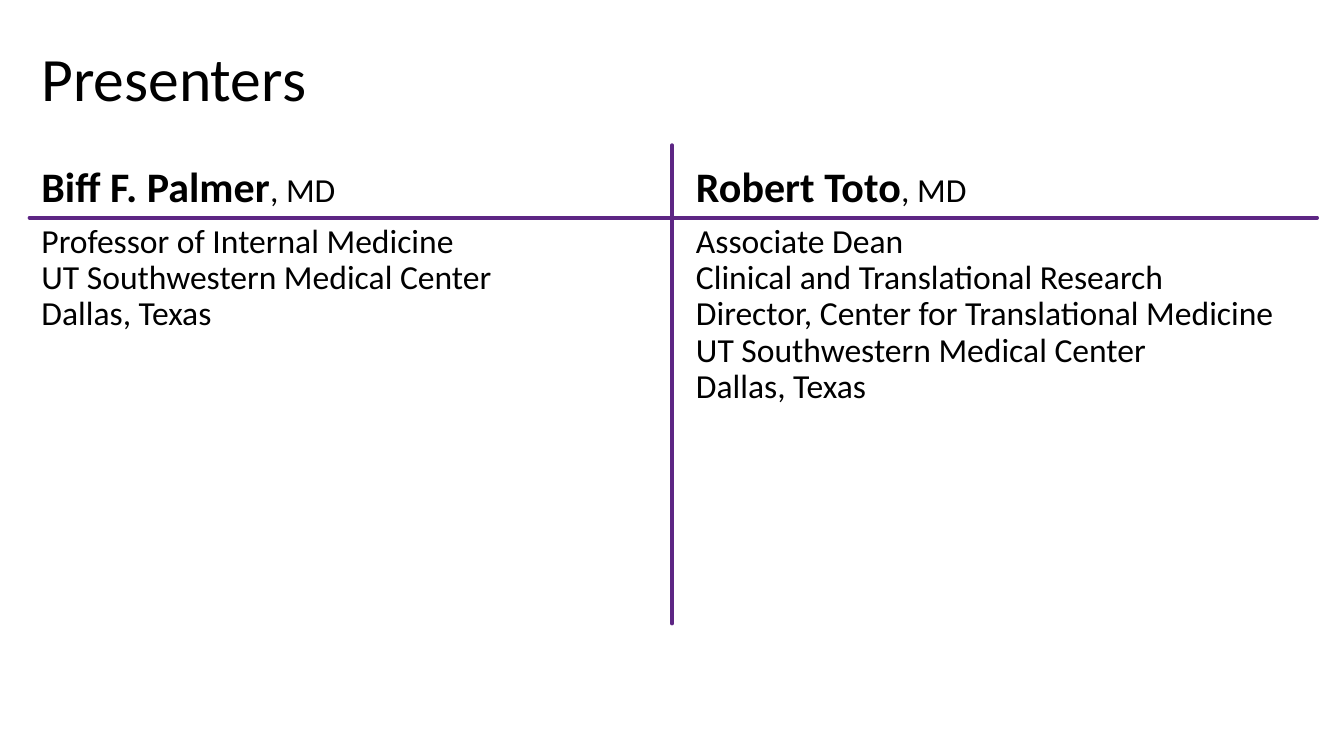
from pptx import Presentation
from pptx.dml.color import RGBColor
from pptx.enum.shapes import MSO_CONNECTOR as CONNECTOR
from pptx.enum.text import MSO_ANCHOR as ANCHOR
from pptx.oxml.ns import qn
from pptx.util import Inches, Pt

COLORS = {"text": "000000", "rule": "5D2684"}
FONT = "Calibri"

# Grid, in inches, on a 16:9 slide
WIDTH = 10
HEIGHT = WIDTH * 9 / 16
MARGIN, GUTTER = 0.21, 0.16
COL_W = (WIDTH - 2 * MARGIN - GUTTER) / 2
TITLE_TOP, TITLE_H = 0.14, 0.94
NAME_TOP, NAME_H, DETAILS_H = 1.1, 0.52, 3.02
RULE_Y = NAME_TOP + NAME_H
BOTTOM = RULE_Y + DETAILS_H

# Name, degree, paragraphs of details (\v is a line break)
PRESENTERS = [
    ("Biff F. Palmer", ", MD",
     ["Professor of Internal Medicine",
      "UT Southwestern Medical Center",
      "Dallas, Texas"]),
    ("Robert Toto", ", MD",
     ["Associate Dean\vClinical and Translational Research\v"
      "Director, Center for Translational Medicine",
      "UT Southwestern Medical Center",
      "Dallas, Texas"]),
]


def format_run(r, size, bold=False):
    r.font.name, r.font.size, r.font.bold = FONT, Pt(size), bold
    r.font.color.rgb = RGBColor.from_string(COLORS["text"])


def add_text(s, box, text, size, anchor=ANCHOR.TOP):
    tf = s.shapes.add_textbox(*map(Inches, box)).text_frame
    tf.word_wrap = True
    tf.vertical_anchor = anchor
    tf.text = text
    for p in tf.paragraphs:
        p.line_spacing = 0.9
        for r in p.runs:
            format_run(r, size)
    return tf


def add_rule(s, x1, y1, x2, y2):
    rule = s.shapes.add_connector(CONNECTOR.STRAIGHT, *map(Inches, (x1, y1, x2, y2)))
    rule.line.color.rgb = RGBColor.from_string(COLORS["rule"])
    rule.line.width = Pt(2)
    rule.line._get_or_add_ln().set("cap", "rnd")
    sp_pr = rule._element.spPr
    sp_pr.append(sp_pr.makeelement(qn("a:effectLst"), {}))


def add_presenter(s, left, top, width, name, degree, details):
    # Name with a lighter degree, sitting on the rule
    tf = add_text(s, (left, top, width, NAME_H), name, 22.5, ANCHOR.BOTTOM)
    p = tf.paragraphs[0]
    p.runs[0].font.bold = True
    r = p.add_run()
    r.text = degree
    format_run(r, 18)
    # Position and place
    add_text(s, (left, top + NAME_H, width, DETAILS_H), "\n".join(details), 18)


def build_slide(prs):
    s = prs.slides.add_slide(prs.slide_layouts[6])
    # Title
    add_text(s, (MARGIN, TITLE_TOP, WIDTH - 2 * MARGIN, TITLE_H),
             "Presenters", 33, ANCHOR.MIDDLE)
    # One column for each presenter
    for i, presenter in enumerate(PRESENTERS):
        add_presenter(s, MARGIN + i * (COL_W + GUTTER), NAME_TOP, COL_W, *presenter)
    # Crossing rules
    add_rule(s, 0.22, RULE_Y, 9.8, RULE_Y)
    add_rule(s, WIDTH / 2, BOTTOM, WIDTH / 2, TITLE_TOP + TITLE_H)


def main():
    prs = Presentation()
    prs.slide_width, prs.slide_height = Inches(WIDTH), Inches(HEIGHT)
    build_slide(prs)
    prs.save("out.pptx")


if __name__ == "__main__":
    main()
